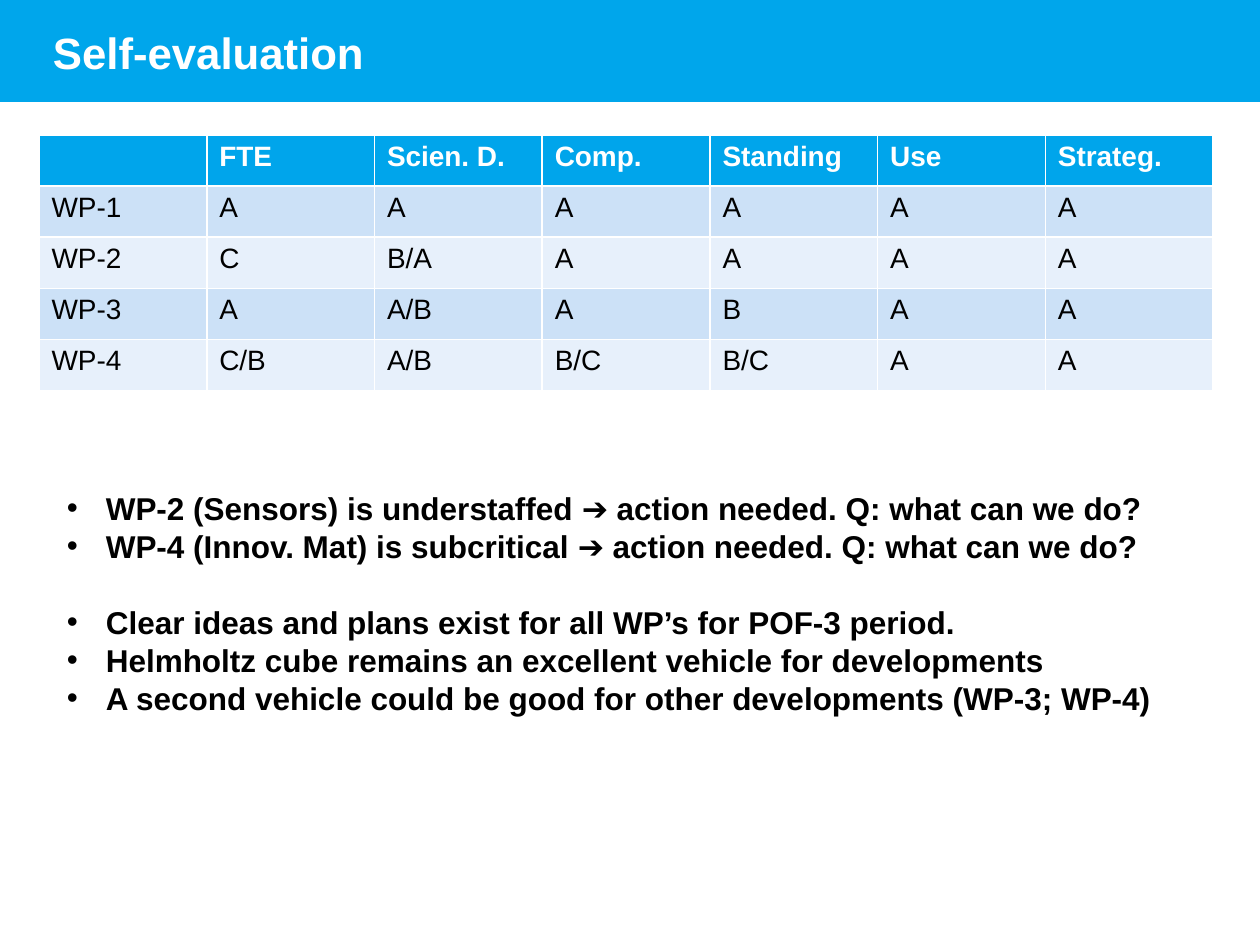
from lxml import etree
from pptx import Presentation
from pptx.dml.color import RGBColor
from pptx.enum import shapes, text
from pptx.oxml import ns
from pptx.util import Inches, Pt

WHITE = RGBColor(0xFF, 0xFF, 0xFF)
BLACK = RGBColor(0, 0, 0)
BLUE = RGBColor(0x00, 0xA6, 0xEB)
HEAD = RGBColor(0x00, 0xA5, 0xEB)
BANDS = RGBColor(0xE7, 0xF0, 0xFB), RGBColor(0xCC, 0xE1, 0xF7)

GRADES = [
    ["", "FTE", "Scien. D.", "Comp.", "Standing", "Use", "Strateg."],
    ["WP-1", "A", "A", "A", "A", "A", "A"],
    ["WP-2", "C", "B/A", "A", "A", "A", "A"],
    ["WP-3", "A", "A/B", "A", "B", "A", "A"],
    ["WP-4", "C/B", "A/B", "B/C", "B/C", "A", "A"],
]
GROUPS = [
    ["WP-2 (Sensors) is understaffed ➔ action needed. Q: what can we do?",
     "WP-4 (Innov. Mat) is subcritical ➔ action needed. Q: what can we do?"],
    ["Clear ideas and plans exist for all WP’s for POF-3 period.",
     "Helmholtz cube remains an excellent vehicle for developments",
     "A second vehicle could be good for other developments (WP-3; WP-4)"],
]


def place(shape, box):
    shape.left, shape.top, shape.width, shape.height = map(Inches, box)


def style(para, size, color, bold):
    font = para.font
    font.name, font.size, font.bold = "Arial", Pt(size), bold
    font.color.rgb = color


def add_header(slide, box, title):
    x, y, w, h = box
    band = slide.shapes.add_shape(shapes.MSO_SHAPE.RECTANGLE, *map(Inches, box))
    band.shadow.inherit = False
    band.fill.solid()
    band.fill.fore_color.rgb = BLUE
    band.line.fill.background()
    slide.shapes._spTree.insert(2, band._element)  # behind the title

    head = slide.shapes.title
    place(head, (x + 0.32, y + 0.11, w - 0.68, h - 0.21))
    head.text_frame.text = title
    head.text_frame.vertical_anchor = text.MSO_ANCHOR.MIDDLE
    head.text_frame.auto_size = text.MSO_AUTO_SIZE.NONE
    para = head.text_frame.paragraphs[0]
    para.alignment = text.PP_ALIGN.LEFT
    style(para, 25, WHITE, True)


def add_grades(slide, box, rows):
    """The default table style draws the white borders."""
    frame = slide.shapes.add_table(len(rows), len(rows[0]), *map(Inches, box))
    for r, row in enumerate(rows):
        for c, label in enumerate(row):
            cell = frame.table.cell(r, c)
            cell.text = label
            cell.fill.solid()
            cell.fill.fore_color.rgb = BANDS[r % 2] if r else HEAD
            style(cell.text_frame.paragraphs[0], 16,
                  BLACK if r else WHITE, r == 0)


def add_points(slide, box, groups):
    body = slide.placeholders[1]
    place(body, box)
    frame = body.text_frame
    frame.auto_size = text.MSO_AUTO_SIZE.NONE
    frame.text = "\n".join(line for group in groups for line in group)
    starts = {0, len(groups[0])}
    for i, para in enumerate(frame.paragraphs):
        props = para._p.get_or_add_pPr()
        props.set("marL", str(Inches(0.31)))
        props.set("indent", str(Inches(-0.31)))
        para.line_spacing = Pt(21.7)
        para.space_before = Pt(21.7 if i and i in starts else 0)
        etree.SubElement(props, ns.qn("a:buFont")).set("typeface", "Arial")
        etree.SubElement(props, ns.qn("a:buChar")).set("char", "•")
        style(para, 18, BLACK, True)


def main():
    deck = Presentation()
    deck.slide_width, deck.slide_height = Inches(10), Inches(7.5)
    slide = deck.slides.add_slide(deck.slide_layouts[1])
    add_header(slide, (0, 0, 10, 0.81), "Self-evaluation")
    add_points(slide, (0.43, 3.83, 8.88, 1.92), GROUPS)
    add_grades(slide, (0.31, 1.07, 9.32, 2.03), GRADES)
    deck.save("out.pptx")


if __name__ == "__main__":
    main()
